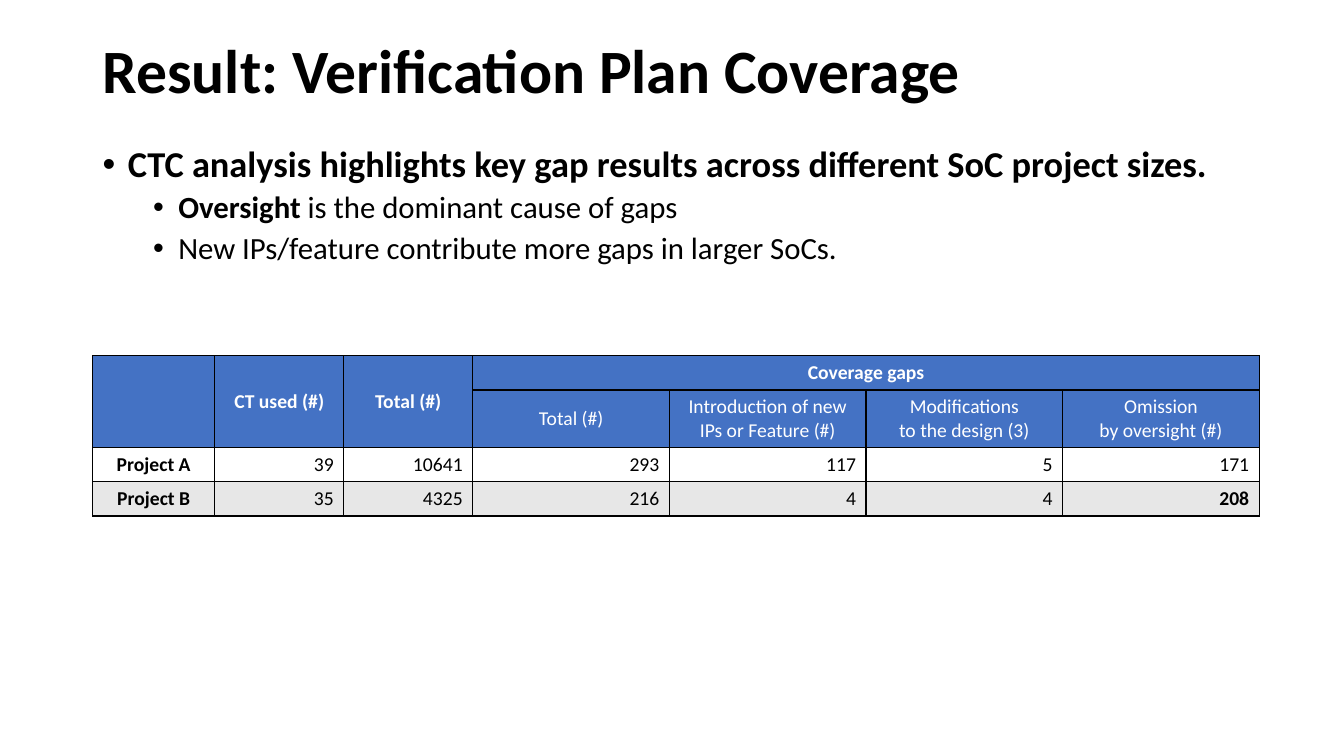
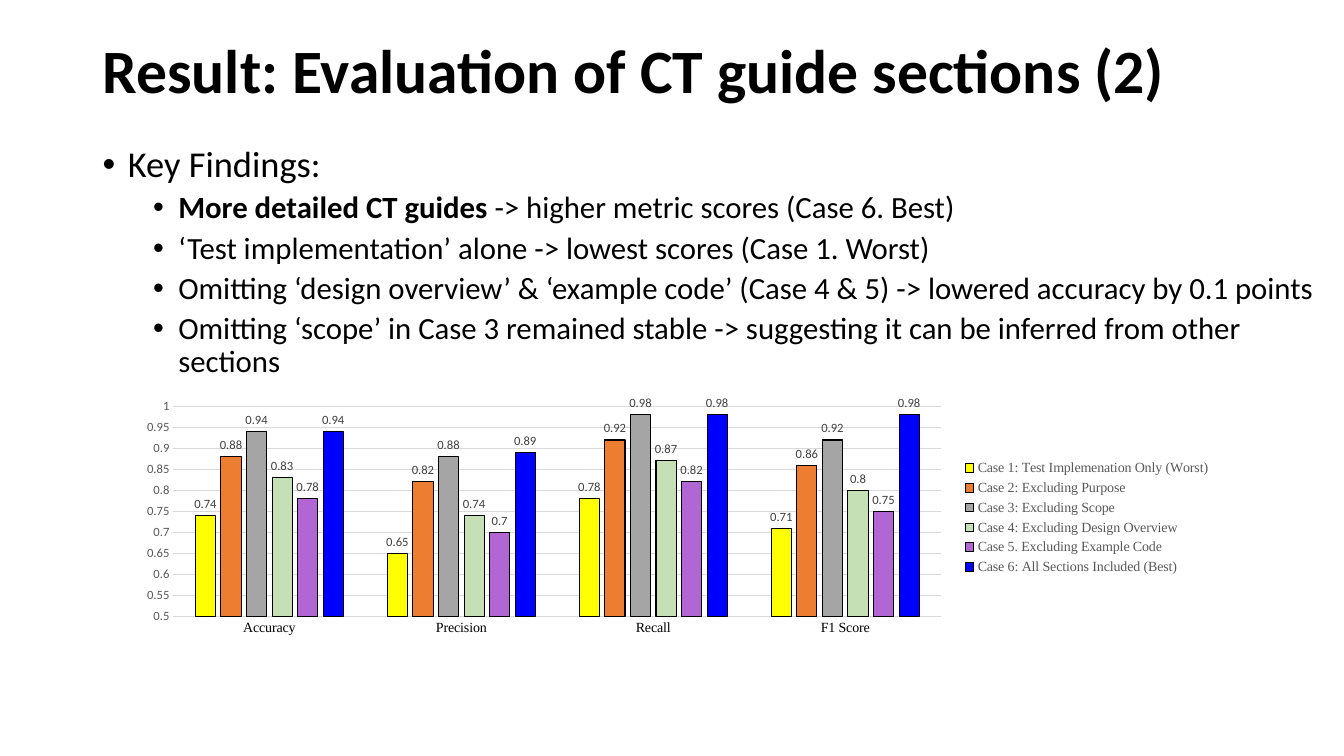
from lxml.etree import SubElement
from pptx import Presentation
from pptx.chart.data import CategoryChartData
from pptx.dml.color import RGBColor
from pptx.enum.chart import (XL_CHART_TYPE, XL_LABEL_POSITION,
                             XL_LEGEND_POSITION, XL_TICK_MARK)
from pptx.enum.text import MSO_ANCHOR, PP_ALIGN
from pptx.oxml.ns import qn
from pptx.util import Inches, Pt

BLACK, WHITE = "000000", "FFFFFF"
HEADER_BLUE, BAND_GREY = "4472C4", "E7E7E7"
GRID_GREY, AXIS_GREY, LABEL_GREY = "D9D9D9", "595959", "404040"
SANS, SERIF = "Calibri", "Times New Roman"

# Left, top, width, height in inches
TITLE_BOX = (0.92, 0, 12.41, 1.45)
BODY_BOX = (0.92, 1.4, 12.41, 5.01)
TABLE_BOX = (0.92, 3.53, 11.56, 1.58)
CHART_BOX = (1.23, 3.91, 10.88, 2.45)

# Per outline level: text size, left indent, space before
LEVELS = [(26, 0.25, 10), (22, 0.75, 5)]
HANGING = 0.25

# Each point: level, then runs of (text, bold)
COVERAGE_POINTS = [
    (0, [("CTC analysis highlights key gap results across different SoC project sizes.", True)]),
    (1, [("Oversight", True), (" is the dominant cause of gaps", False)]),
    (1, [("New IPs/feature contribute more gaps in larger SoCs.", False)]),
]
FINDINGS = [
    (0, [("Key Findings:", False)]),
    (1, [("More detailed CT guides ", True), ("-> higher metric scores (Case 6. Best)", False)]),
    (1, [("‘Test implementation’ alone -> lowest scores (Case 1. Worst)", False)]),
    (1, [("Omitting ‘design overview’ & ‘example code’ (Case 4 & 5) -> "
          "lowered accuracy by 0.1 points", False)]),
    (1, [("Omitting ‘scope’ in Case 3 remained stable -> "
          "suggesting it can be inferred from other sections", False)]),
]

COLUMN_WIDTHS = [1.21, 1.28, 1.28] + [1.95] * 4
ROW_HEIGHTS = [0.34, 0.57, 0.34, 0.34]
COVERAGE_ROWS = [
    ["", "CT used (#)", "Total (#)", "Coverage gaps", "", "", ""],
    ["", "", "", "Total (#)", "Introduction of new IPs or Feature (#)",
     "Modifications\nto the design (3)", "Omission\nby oversight (#)"],
    ["Project A", "39", "10641", "293", "117", "5", "171"],
    ["Project B", "35", "4325", "216", "4", "4", "208"],
]
MERGES = [((0, 0), (1, 0)), ((0, 1), (1, 1)), ((0, 2), (1, 2)), ((0, 3), (0, 6))]
ROW_FILLS = [HEADER_BLUE, HEADER_BLUE, WHITE, BAND_GREY]
HIGHLIGHT = (3, 6)

METRICS = ["Accuracy", "Precision", "Recall", "F1 Score"]
CASES = [
    ("Case 1: Test Implemenation Only (Worst)", "FFFF00", (0.74, 0.65, 0.78, 0.71)),
    ("Case 2: Excluding Purpose", "ED7D31", (0.88, 0.82, 0.92, 0.86)),
    ("Case 3: Excluding Scope", "A5A5A5", (0.94, 0.88, 0.98, 0.92)),
    ("Case 4: Excluding Design Overview", "C5E0B4", (0.83, 0.74, 0.87, 0.8)),
    ("Case 5. Excluding Example Code", "B266D4", (0.78, 0.7, 0.82, 0.75)),
    ("Case 6: All Sections Included (Best)", "0000FF", (0.94, 0.89, 0.98, 0.98)),
]
PLOT_LAYOUT = {"x": 0.045, "y": 0.05, "w": 0.7, "h": 0.85}


def rgb(color):
    return RGBColor.from_string(color)


def place(box):
    return [Inches(length) for length in box]


def style_font(font, size, color=BLACK, bold=False, name=SANS):
    font.name, font.size, font.bold = name, Pt(size), bold
    font.color.rgb = rgb(color)


def style_line(line, color, width=0.75):
    line.color.rgb = rgb(color)
    line.width = Pt(width)


# Title and outline text
def add_title(slide, box, text):
    frame = slide.shapes.add_textbox(*place(box)).text_frame
    frame.word_wrap = True
    frame.vertical_anchor = MSO_ANCHOR.MIDDLE
    frame.text = text
    heading = frame.paragraphs[0]
    heading.line_spacing = 0.9
    style_font(heading.runs[0].font, 44, bold=True)


def add_outline(slide, box, points):
    frame = slide.shapes.add_textbox(*place(box)).text_frame
    frame.word_wrap = True
    for index, (level, runs) in enumerate(points):
        point = frame.add_paragraph() if index else frame.paragraphs[0]
        size, indent, gap = LEVELS[level]
        point.level = level
        point.line_spacing = 0.9
        point.space_before = Pt(gap if index else 0)
        properties = point._p.get_or_add_pPr()
        properties.set("marL", str(Inches(indent)))
        properties.set("indent", str(-Inches(HANGING)))
        SubElement(properties, qn("a:buFont"), typeface="Arial")
        SubElement(properties, qn("a:buChar"), char="•")
        for text, bold in runs:
            run = point.add_run()
            run.text = text
            style_font(run.font, size, bold=bold)


# Coverage table
def add_borders(cell):
    properties = cell._tc.get_or_add_tcPr()
    for side in ("lnL", "lnR", "lnT", "lnB"):
        border = SubElement(properties, qn(f"a:{side}"), w=str(Pt(1)))
        fill = SubElement(border, qn("a:solidFill"))
        SubElement(fill, qn("a:srgbClr"), val=BLACK)


def fill_cell(cell, row, column, text):
    is_header = row < 2
    add_borders(cell)
    cell.fill.solid()
    cell.fill.fore_color.rgb = rgb(ROW_FILLS[row])
    cell.vertical_anchor = MSO_ANCHOR.MIDDLE
    cell.text = text
    bold = row == 0 or column == 0 or (row, column) == HIGHLIGHT
    for line in cell.text_frame.paragraphs:
        line.alignment = PP_ALIGN.CENTER if is_header or column == 0 else PP_ALIGN.RIGHT
        line.font.size = Pt(14)
        for run in line.runs:
            style_font(run.font, 14, WHITE if is_header else BLACK, bold)


def add_coverage_table(slide, box):
    table = slide.shapes.add_table(len(ROW_HEIGHTS), len(COLUMN_WIDTHS), *place(box)).table
    table.first_row = table.horz_banding = False
    for column, width in zip(table.columns, COLUMN_WIDTHS):
        column.width = Inches(width)
    for row, height in zip(table.rows, ROW_HEIGHTS):
        row.height = Inches(height)
    for row, texts in enumerate(COVERAGE_ROWS):
        for column, text in enumerate(texts):
            fill_cell(table.cell(row, column), row, column, text)
    for first, last in MERGES:
        table.cell(*first).merge(table.cell(*last))


# Score chart
def set_plot_layout(chart):
    plot_area = chart._chartSpace.chart.plotArea
    layout = plot_area.find(qn("c:layout"))
    if layout is None:
        layout = SubElement(plot_area, qn("c:layout"))
        plot_area.insert(0, layout)
    manual = SubElement(layout, qn("c:manualLayout"))
    settings = {"layoutTarget": "inner", "xMode": "edge", "yMode": "edge", **PLOT_LAYOUT}
    for tag, value in settings.items():
        SubElement(manual, qn(f"c:{tag}"), val=str(value))


def style_axes(chart):
    metrics, scores = chart.category_axis, chart.value_axis
    for axis in (metrics, scores):
        axis.major_tick_mark = axis.minor_tick_mark = XL_TICK_MARK.NONE
    style_font(metrics.tick_labels.font, 10, name=SERIF)
    style_line(metrics.format.line, GRID_GREY)
    style_font(scores.tick_labels.font, 9, AXIS_GREY)
    scores.format.line.fill.background()
    scores.minimum_scale, scores.maximum_scale, scores.major_unit = 0.5, 1, 0.05
    style_line(scores.major_gridlines.format.line, GRID_GREY)


def add_score_chart(slide, box):
    scores = CategoryChartData()
    scores.categories = METRICS
    for name, _, values in CASES:
        scores.add_series(name, values)
    chart = slide.shapes.add_chart(XL_CHART_TYPE.COLUMN_CLUSTERED, *place(box), scores).chart
    chart.has_title = False
    style_font(chart.font, 10)
    set_plot_layout(chart)
    style_axes(chart)

    plot = chart.plots[0]
    plot.vary_by_categories = False
    plot.gap_width, plot.overlap = 219, -27
    for case, (_, color, _) in zip(plot.series, CASES):
        case.format.fill.solid()
        case.format.fill.fore_color.rgb = rgb(color)
        style_line(case.format.line, BLACK)
        labels = case.data_labels
        labels.show_value = True
        labels.position = XL_LABEL_POSITION.OUTSIDE_END
        style_font(labels.font, 9, LABEL_GREY)

    chart.has_legend = True
    chart.legend.position = XL_LEGEND_POSITION.RIGHT
    chart.legend.include_in_layout = False
    style_font(chart.legend.font, 10, AXIS_GREY, name=SERIF)


# Slides
def add_result_slide(deck, title, points):
    slide = deck.slides.add_slide(deck.slide_layouts[6])
    add_title(slide, TITLE_BOX, title)
    add_outline(slide, BODY_BOX, points)
    return slide


def main():
    deck = Presentation()
    deck.slide_width, deck.slide_height = Inches(13.33), Inches(7.5)
    coverage = add_result_slide(deck, "Result: Verification Plan Coverage", COVERAGE_POINTS)
    add_coverage_table(coverage, TABLE_BOX)
    evaluation = add_result_slide(deck, "Result: Evaluation of CT guide sections (2)", FINDINGS)
    add_score_chart(evaluation, CHART_BOX)
    deck.save("out.pptx")


if __name__ == "__main__":
    main()
